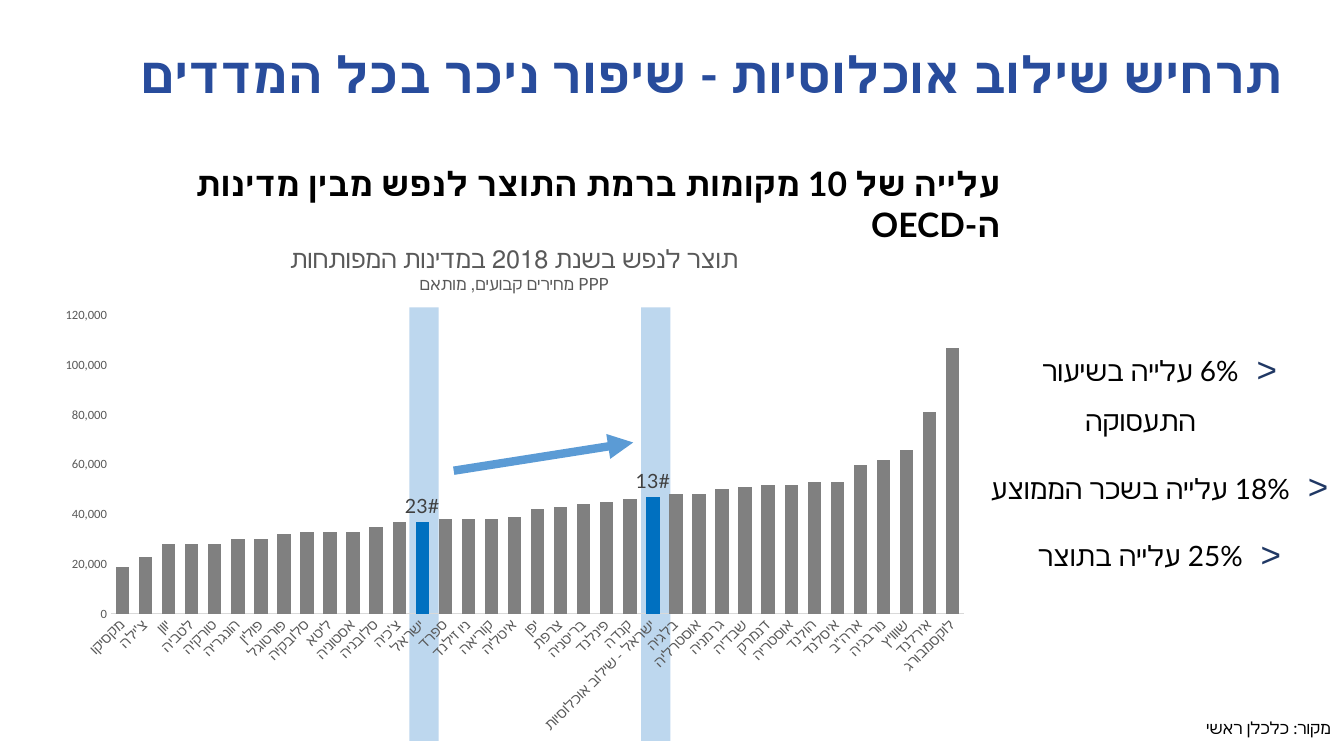
from lxml import etree
from pptx import Presentation
from pptx.chart.data import CategoryChartData
from pptx.dml.color import RGBColor
from pptx.enum.chart import XL_CHART_TYPE as ChartType
from pptx.enum.chart import XL_LABEL_POSITION as LabelPosition
from pptx.enum.chart import XL_TICK_MARK as TickMark
from pptx.enum.shapes import MSO_CONNECTOR as Connector
from pptx.enum.shapes import MSO_SHAPE as ShapeType
from pptx.enum.text import MSO_ANCHOR as Anchor
from pptx.enum.text import MSO_AUTO_SIZE as AutoSize
from pptx.enum.text import PP_ALIGN as Align
from pptx.oxml import parse_xml
from pptx.oxml.ns import nsdecls, qn
from pptx.util import Inches, Pt

COLORS = {
    "title": "284C9C", "text": "000000", "bullet": "203864", "band": "BDD7EE",
    "bar": "808080", "israel": "0070C0", "arrow": "5B9BD5",
    "axis_text": "595959", "axis_line": "D9D9D9", "label": "404040",
}
GDP_PER_CAPITA = {
    "מקסיקו": 19000, "צ'ילה": 23000, "יוון": 28000, "לטביה": 28000,
    "טורקיה": 28000, "הונגריה": 30000, "פולין": 30000, "פורטוגל": 32000,
    "סלובקיה": 33000, "ליטא": 33000, "אסטוניה": 33000, "סלובניה": 35000,
    "צ'כיה": 37000, "ישראל": 37000, "ספרד": 38000, "ניו זילנד": 38000,
    "קוריאה": 38000, "איטליה": 39000, "יפן": 42000, "צרפת": 43000,
    "בריטניה": 44000, "פינלנד": 45000, "קנדה": 46000,
    "ישראל - שילוב אוכלוסיות": 47000, "בלגיה": 48000, "אוסטרליה": 48000,
    "גרמניה": 50000, "שבדיה": 51000, "דנמרק": 52000, "אוסטריה": 52000,
    "הולנד": 53000, "איסלנד": 53000, "ארה\"ב": 60000, "נורבגיה": 62000,
    "שווויץ": 66000, "אירלנד": 81000, "לוקסמבורג": 107000,
}
RANKS = {"ישראל": "23#", "ישראל - שילוב אוכלוסיות": "13#"}
CHART_TITLE = {"תוצר לנפש בשנת 2018 במדינות המפותחות": 18, "מחירים קבועים, מותאם PPP": 12}
BULLETS = ["6% עלייה בשיעור התעסוקה", "18% עלייה בשכר הממוצע ", "25% עלייה בתוצר"]
PLOT_LAYOUT = {"x": 0.07, "y": 0.17, "w": 0.91, "h": 0.58}


def color(name):
    """Return the named colour."""
    return RGBColor.from_string(COLORS[name])


def set_values(target, values):
    """Set each attribute of the target from a dict."""
    for name, value in values.items():
        setattr(target, name, value)


def style_font(font, size, color_name, face="Lato", bold=False):
    """Format a font."""
    set_values(font, {"size": Pt(size), "name": face, "bold": bold})
    font.color.rgb = color(color_name)


def write_text(shape, box, lines, size, color_name="text", bold=False,
               paragraph_format=None, frame_format=None):
    """Place a shape and fill it with right-to-left paragraphs."""
    set_values(shape, dict(zip(("left", "top", "width", "height"), map(Inches, box))))
    frame = shape.text_frame
    set_values(frame, {"word_wrap": True, "auto_size": AutoSize.NONE, **(frame_format or {})})
    frame.text = "\n".join(lines)
    for paragraph in frame.paragraphs:
        set_values(paragraph, {"alignment": Align.RIGHT, **(paragraph_format or {})})
        paragraph._p.get_or_add_pPr().set("rtl", "1")
        for run in paragraph.runs:
            style_font(run.font, size, color_name, bold=bold)
            etree.SubElement(run.font._element, qn("a:cs"), typeface="Lato")


def add_bullets(shape):
    """Give every paragraph of the shape an angle bullet with a hanging indent."""
    for paragraph in shape.text_frame.paragraphs:
        properties = paragraph._p.get_or_add_pPr()
        properties.set("marL", str(Inches(0.38)))
        properties.set("indent", str(-Inches(0.38)))
        bullet_color = etree.SubElement(properties, qn("a:buClr"))
        etree.SubElement(bullet_color, qn("a:srgbClr"), val=COLORS["bullet"])
        etree.SubElement(properties, qn("a:buSzPct"), val="125000")
        etree.SubElement(properties, qn("a:buChar"), char="<")


def add_band(slide, left):
    """Add a vertical band that highlights one column."""
    band = slide.shapes.add_shape(
        ShapeType.RECTANGLE, Inches(left), Inches(3.05), Inches(0.29), Inches(4.3))
    band.shadow.inherit = False
    band.fill.solid()
    band.fill.fore_color.rgb = color("band")
    band.line.fill.background()


def add_arrow(slide, start, end):
    """Add a thick arrow from start to end."""
    arrow = slide.shapes.add_connector(Connector.STRAIGHT, *map(Inches, start + end))
    arrow.line.width = Pt(6)
    arrow.line.color.rgb = color("arrow")
    etree.SubElement(arrow.line._get_or_add_ln(), qn("a:tailEnd"), type="triangle")
    etree.SubElement(arrow._element.spPr, qn("a:effectLst"))


def format_axes(chart):
    """Format the category and value axes."""
    axes = {chart.category_axis: 10.5, chart.value_axis: 9}
    for axis, size in axes.items():
        set_values(axis, {"major_tick_mark": TickMark.NONE, "minor_tick_mark": TickMark.NONE,
                          "has_major_gridlines": False})
        style_font(axis.tick_labels.font, size, "axis_text", "Calibri")
    category_line = chart.category_axis.format.line
    category_line.width = Pt(0.75)
    category_line.color.rgb = color("axis_line")
    labels = chart.category_axis._element.find(qn("c:txPr"))
    labels.find(qn("a:bodyPr")).set("rot", "-2700000")
    set_values(chart.value_axis, {"minimum_scale": 0, "maximum_scale": 120000,
                                  "major_unit": 20000})
    chart.value_axis.format.line.fill.background()
    set_values(chart.value_axis.tick_labels,
               {"number_format": "#,##0", "number_format_is_linked": False})


def format_series(chart):
    """Colour the columns and label the two ranked ones."""
    plot = chart.plots[0]
    set_values(plot, {"gap_width": 72, "overlap": -86, "vary_by_categories": False})
    series = plot.series[0]
    series.format.fill.solid()
    series.format.fill.fore_color.rgb = color("bar")
    countries = list(GDP_PER_CAPITA)
    for country, rank in RANKS.items():
        point = series.points[countries.index(country)]
        point.format.fill.solid()
        point.format.fill.fore_color.rgb = color("israel")
        label = point.data_label
        label.text_frame.text = rank
        label.position = LabelPosition.OUTSIDE_END
        style_font(label.text_frame.paragraphs[0].runs[0].font, 14, "label")


def format_chart_area(chart):
    """Fix the plot position and make the backgrounds transparent."""
    plot_area = chart._chartSpace.chart.plotArea
    for old_layout in plot_area.findall(qn("c:layout")):
        plot_area.remove(old_layout)
    layout = etree.Element(qn("c:layout"))
    manual = etree.SubElement(layout, qn("c:manualLayout"))
    modes = {"layoutTarget": "inner", "xMode": "edge", "yMode": "edge"}
    for name, value in {**modes, **PLOT_LAYOUT}.items():
        etree.SubElement(manual, qn(f"c:{name}"), val=str(value))
    plot_area.insert(0, layout)
    clear = f'<c:spPr {nsdecls("c", "a")}><a:noFill/><a:ln><a:noFill/></a:ln></c:spPr>'
    plot_area.append(parse_xml(clear))
    chart._chartSpace.chart.addnext(parse_xml(clear))


def add_gdp_chart(slide):
    """Add the column chart of output per person."""
    data = CategoryChartData(number_format="#,##0")
    data.categories = list(GDP_PER_CAPITA)
    data.add_series("Series 1", list(GDP_PER_CAPITA.values()))
    chart = slide.shapes.add_chart(
        ChartType.COLUMN_CLUSTERED, Inches(0.45), Inches(2.26),
        Inches(9.3), Inches(5.11), data).chart
    chart.has_legend = False
    style_font(chart.font, 10, "text", "Calibri")
    title = chart.chart_title.text_frame
    title.text = "\n".join(CHART_TITLE)
    for paragraph, size in zip(title.paragraphs, CHART_TITLE.values()):
        style_font(paragraph.runs[0].font, size, "axis_text")
    format_axes(chart)
    format_series(chart)
    format_chart_area(chart)


def main():
    """Build the slide and save it."""
    presentation = Presentation()
    set_values(presentation, {"slide_width": Inches(13.33), "slide_height": Inches(7.5)})
    slide = presentation.slides.add_slide(presentation.slide_layouts[1])
    title, body = slide.placeholders
    write_text(title, (0.45, 0.17, 12.38, 1.19),
               ["תרחיש שילוב אוכלוסיות - שיפור ניכר בכל המדדים"], 36, "title", True,
               {"line_spacing": 0.9}, {"vertical_anchor": Anchor.MIDDLE})
    write_text(body, (9.7, 3.29, 3.6, 2.46), BULLETS, 20, paragraph_format={
        "alignment": Align.CENTER, "line_spacing": 1.5, "space_before": Pt(12)})
    add_bullets(body)
    for left in (4.06, 6.36):
        add_band(slide, left)
    captions = [
        ((0, 7.07, 13.3, 0.3), "מקור: כלכלן ראשי ", 12, False),
        ((0.94, 1.57, 9.08, 0.5), "עלייה של 10 מקומות ברמת התוצר לנפש מבין מדינות ה-OECD", 24, True),
    ]
    for box, text, size, bold in captions:
        caption = slide.shapes.add_textbox(*map(Inches, box))
        write_text(caption, box, [text], size, bold=bold,
                   frame_format={"auto_size": AutoSize.SHAPE_TO_FIT_TEXT})
    add_gdp_chart(slide)
    add_arrow(slide, (4.5, 4.67), (6.28, 4.39))
    presentation.save("out.pptx")


if __name__ == "__main__":
    main()
